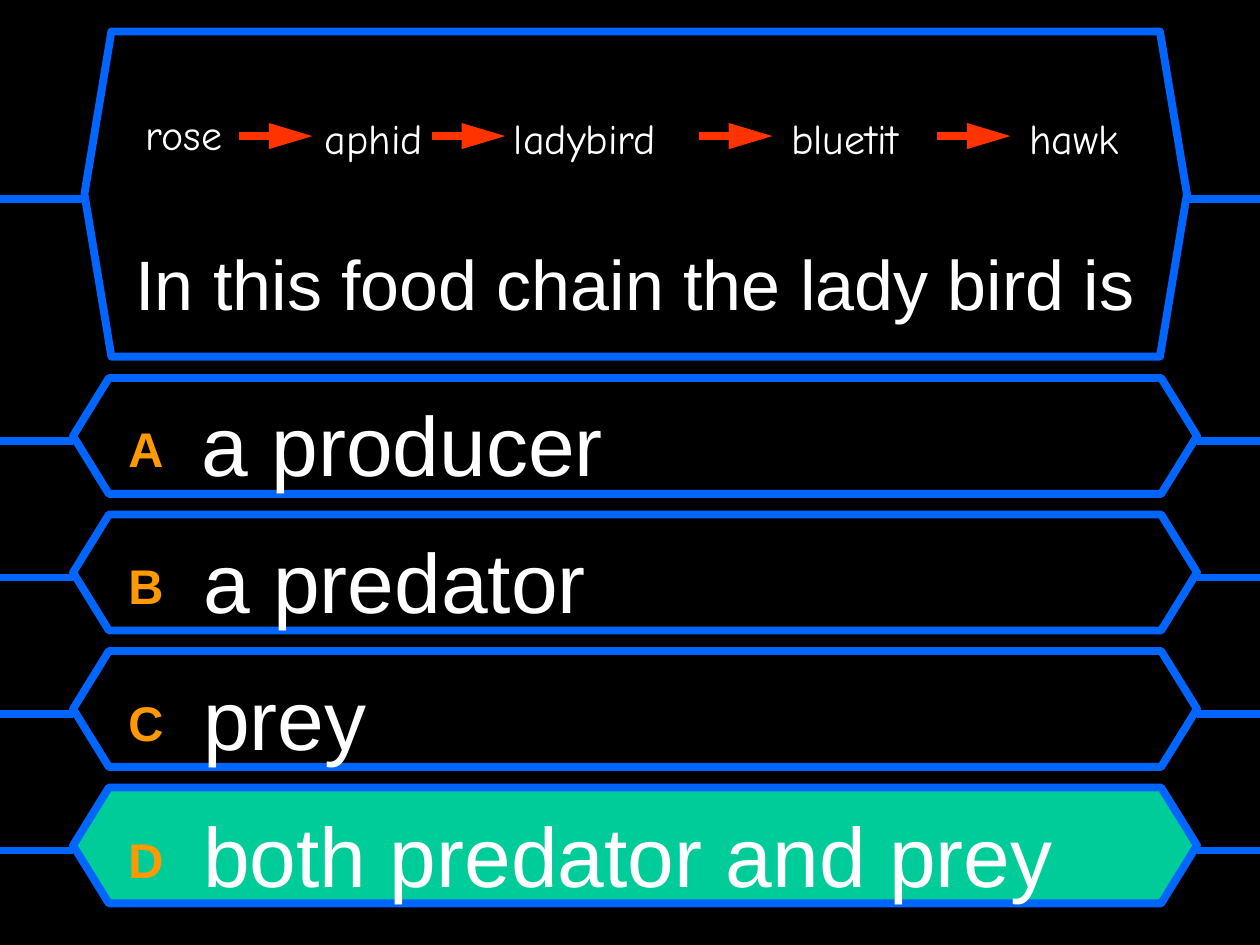
from lxml import etree
from pptx import Presentation
from pptx.dml.color import RGBColor
from pptx.enum.shapes import MSO_CONNECTOR as CONN, MSO_SHAPE as SHAPE
from pptx.enum.text import MSO_ANCHOR as ANCHOR, PP_ALIGN as ALIGN
from pptx.oxml.ns import qn
from pptx.util import Inches, Pt

BLUE, RED, ORANGE, WHITE, BLACK, GREEN = (
    "0066FF", "FF3300", "FF9900", "FFFFFF", "000000", "00CC99")


def rgb(value):
    return RGBColor.from_string(value)


def add_line(x1, x2, y, color, width):
    c = s.shapes.add_connector(CONN.STRAIGHT, Inches(x1), Inches(y), Inches(x2), Inches(y))
    c.line.color.rgb = rgb(color)
    c.line.width = Pt(width)
    etree.SubElement(c._element.spPr, qn("a:effectLst"))
    return c


prs = Presentation()
prs.slide_width, prs.slide_height = Inches(10), Inches(7.5)
s = prs.slides.add_slide(prs.slide_layouts[5])
s.background.fill.solid()
s.background.fill.fore_color.rgb = rgb(BLACK)

# Question and answer frames, each with a line to both slide edges
frames = [(0.67, 0.25, 8.75, 2.58, 0.083, 1.58, BLACK)]
for i in range(4):
    top = 3 + i * 3.25 / 3
    frames.append((0.58, top, 8.92, 0.92, 0.309, top + 0.5, GREEN if i == 3 else BLACK))
for left, top, width, height, adj, line_y, fill in frames:
    sp = s.shapes.add_shape(SHAPE.HEXAGON, Inches(left), Inches(top),
                            Inches(width), Inches(height))
    sp.adjustments[0] = adj
    sp.adjustments[1] = 1.155
    sp.shadow.inherit = False
    sp.fill.solid()
    sp.fill.fore_color.rgb = rgb(fill)
    sp.line.color.rgb = rgb(BLUE)
    sp.line.width = Pt(4.5)
    add_line(left, 0, line_y, BLUE, 4.5)
    add_line(10, left + width, line_y, BLUE, 4.5)

# Question, brought in front of its frame
title = s.shapes.title
s.shapes._spTree.append(title._element)
title.left, title.top = Inches(0.83), Inches(1.83)
title.width, title.height = Inches(8.42), Inches(0.83)
tf = title.text_frame
tf.text = "In this food chain the lady bird is"
tf.vertical_anchor = ANCHOR.MIDDLE
p = tf.paragraphs[0]
p.alignment = ALIGN.CENTER
font = p.runs[0].font
font.name, font.size = "Arial", Pt(40)
font.color.rgb = rgb(WHITE)

# Answers
answers = ["a producer", "a predator", "prey", "both predator and prey"]
tf = s.shapes.add_textbox(Inches(0.92), Inches(2.98), Inches(8.33), Inches(4.27)).text_frame
tf.word_wrap = True
for i, (letter, answer) in enumerate(zip("ABCD", answers)):
    p = tf.paragraphs[0] if i == 0 else tf.add_paragraph()
    if i:
        p.space_before = Pt(13.5)
    pPr = p._p.get_or_add_pPr()
    pPr.set("marL", str(Inches(0.38)))
    pPr.set("indent", str(Inches(-0.38)))
    for text, size, color in [(letter + " ", 48, ORANGE), (" ", 54, BLACK), (answer, 48, WHITE)]:
        r = p.add_run()
        r.text = text
        r.font.name, r.font.size = "Arial", Pt(size)
        r.font.color.rgb = rgb(color)
    p.runs[0].font.bold = True
    p.runs[0].font._element.set("baseline", "10000")

# Food chain arrows
for x in (1.9, 3.43, 5.55, 7.44):
    c = add_line(x, x + 0.58, 1.08, RED, 5)
    etree.SubElement(c.line._get_or_add_ln(), qn("a:tailEnd"), type="triangle", w="med", len="lg")

# Food chain organisms
organisms = [("rose", 1.06, 0.81, 1.26), ("aphid", 2.48, 0.84, 1.26),
             ("ladybird", 3.98, 0.84, 1.65), ("bluetit", 6.18, 0.84, 1.26),
             ("hawk", 8.07, 0.84, 1.26)]
for name, left, top, width in organisms:
    tf = s.shapes.add_textbox(Inches(left), Inches(top), Inches(width), Inches(0.5)).text_frame
    tf.word_wrap = True
    tf.text = name
    font = tf.paragraphs[0].runs[0].font
    font.name, font.size = "Comic Neue", Pt(24)
    font.color.rgb = rgb(WHITE)

prs.save("out.pptx")
